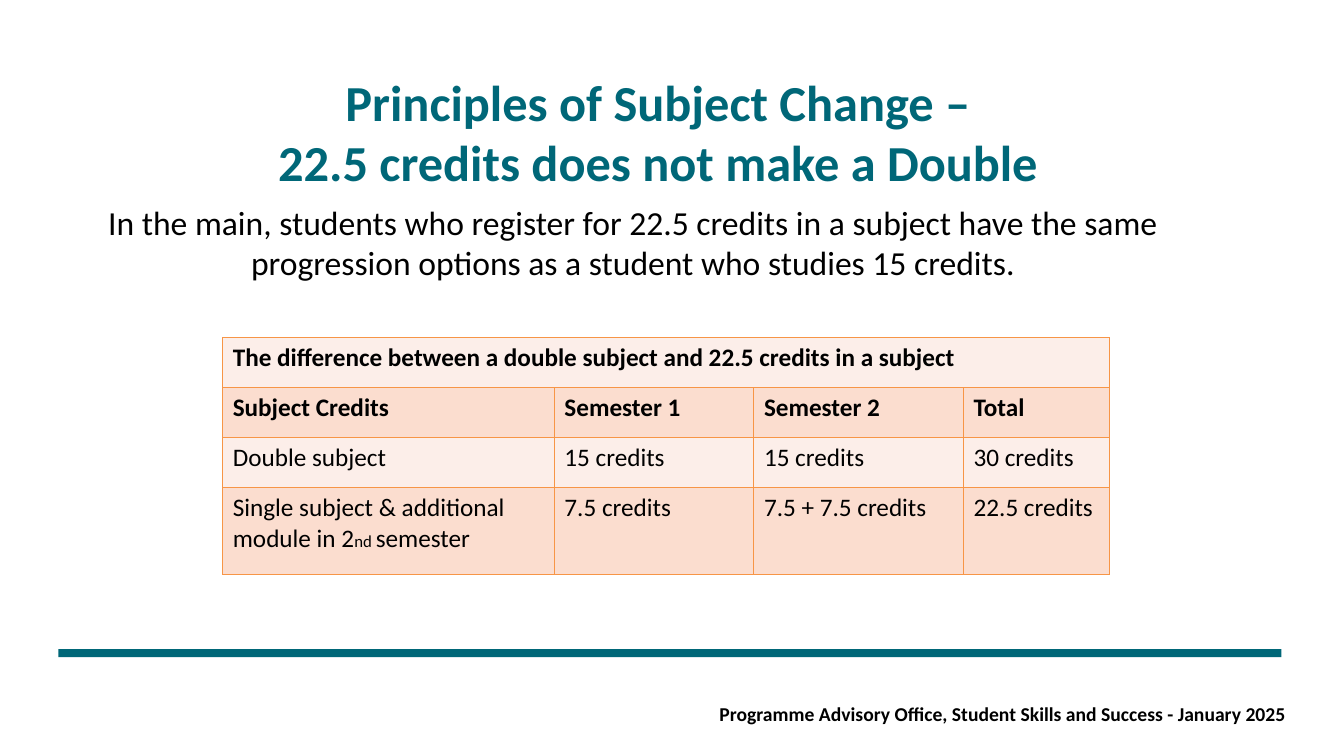
from lxml.etree import SubElement
from pptx import Presentation
from pptx.dml.color import RGBColor
from pptx.enum.shapes import MSO_SHAPE as Preset
from pptx.enum.text import MSO_ANCHOR as Anchor, MSO_AUTO_SIZE as AutoSize, PP_ALIGN as Align
from pptx.oxml.ns import qn
from pptx.util import Inches, Pt

WIDTH, HEIGHT = 13.33, 7.5
COLUMNS, ROWS = 40, 30
COLORS = {"teal": "006778", "black": "000000", "border": "F79546",
          "light": "FCEEE9", "dark": "FBDDCF"}

CREDIT_ROWS = [
    ["The difference between a double subject and 22.5 credits in a subject", "", "", ""],
    ["Subject Credits", "Semester 1", "Semester 2", "Total"],
    ["Double subject", "15 credits", "15 credits", "30 credits"],
    ["Single subject & additional", "7.5 credits", "7.5 + 7.5 credits", "22.5 credits"],
]


def color(name):
    return RGBColor.from_string(COLORS[name])


def across(columns):
    return Inches(columns * WIDTH / COLUMNS)


def down(rows):
    return Inches(rows * HEIGHT / ROWS)


class SlideBuilder:
    """Places elements on one slide, in grid columns and rows."""

    font_name = "Calibri"

    def __init__(self, slide):
        self.slide = slide

    def box(self, left, top, width, height):
        return across(left), down(top), across(width), down(height)

    def style(self, paragraph, size, bold=False, tint="black", align=Align.LEFT):
        paragraph.alignment = align
        paragraph.space_before = Pt(0)
        font = paragraph.font
        font.name, font.size, font.bold = self.font_name, Pt(size), bold
        font.color.rgb = color(tint)

    def fill_text(self, shape, grid_box, lines, anchor=Anchor.TOP, **style):
        shape.left, shape.top, shape.width, shape.height = self.box(*grid_box)
        frame = shape.text_frame
        frame.word_wrap = True
        frame.auto_size = AutoSize.NONE
        frame.vertical_anchor = anchor
        frame.text = "\n".join(lines)
        for paragraph in frame.paragraphs:
            self.style(paragraph, **style)

    def title(self, grid_box, lines):
        shape = self.slide.shapes.title
        self.fill_text(shape, grid_box, lines, anchor=Anchor.MIDDLE, size=36,
                       bold=True, tint="teal", align=Align.CENTER)
        frame = shape.text_frame
        frame.margin_top = frame.margin_bottom = 0

    def statement(self, grid_box, text):
        shape = self.slide.placeholders[1]
        shape.text_frame.text = text
        self.fill_text(shape, grid_box, [text], size=24, align=Align.CENTER)
        properties = shape.text_frame.paragraphs[0]._p.get_or_add_pPr()
        properties.set("marL", "0")
        properties.set("indent", "0")
        # The bullet element follows the spacing and precedes nothing else here
        SubElement(properties, qn("a:buNone"))
        default_run = properties.find(qn("a:defRPr"))
        if default_run is not None:
            properties.append(default_run)

    def footer(self, grid_box, text):
        shape = self.slide.shapes.add_textbox(*self.box(*grid_box))
        self.fill_text(shape, grid_box, [text], size=14, bold=True, align=Align.RIGHT)

    def rule(self, grid_box):
        bar = self.slide.shapes.add_shape(Preset.RECTANGLE, *self.box(*grid_box))
        bar.shadow.inherit = False
        bar.fill.solid()
        bar.fill.fore_color.rgb = color("teal")
        bar.line.fill.background()

    def border(self, cell):
        properties = cell._tc.get_or_add_tcPr()
        for side in ("lnL", "lnR", "lnT", "lnB"):
            line = SubElement(properties, qn(f"a:{side}"), w=str(Pt(0.75)))
            fill = SubElement(line, qn("a:solidFill"))
            SubElement(fill, qn("a:srgbClr"), val=COLORS["border"])

    def table(self, left, top, widths, heights, values, header_rows):
        grid_box = self.box(left, top, sum(widths), sum(heights))
        table = self.slide.shapes.add_table(len(heights), len(widths), *grid_box).table
        table.first_row = table.horz_banding = False
        for column, width in zip(table.columns, widths):
            column.width = across(width)
        for index, (row, height, texts) in enumerate(zip(table.rows, heights, values)):
            row.height = down(height)
            for cell, text in zip(row.cells, texts):
                cell.text = text
                self.style(cell.text_frame.paragraphs[0], 18, bold=index < header_rows)
                self.border(cell)
                cell.fill.solid()
                cell.fill.fore_color.rgb = color("dark" if index % 2 else "light")
        table.cell(0, 0).merge(table.cell(0, len(widths) - 1))
        return table

    def add_semester_line(self, cell):
        """Add the second line of the last row, with its small ordinal."""
        paragraph = cell.text_frame.add_paragraph()
        self.style(paragraph, 18)
        for text, size in (("module in 2", 18), ("nd ", 12), ("semester", 18)):
            run = paragraph.add_run()
            run.text = text
            run.font.size = Pt(size)


def main():
    presentation = Presentation()
    presentation.slide_width, presentation.slide_height = Inches(WIDTH), Inches(HEIGHT)
    slide = presentation.slides.add_slide(presentation.slide_layouts[1])
    builder = SlideBuilder(slide)
    builder.rule((1.74, 25.76, 36.4, 0.32))
    builder.title((7.14, 2.77, 24.9, 4.88),
                  ["Principles of Subject Change –", "22.5 credits does not make a Double"])
    builder.statement((2.31, 7.8, 33.06, 3.64),
                      "In the main, students who register for 22.5 credits in a subject have "
                      "the same progression options as a student who studies 15 credits.")
    table = builder.table(6.63, 13.4, [9.87, 5.94, 6.24, 4.35], [1.98, 1.98, 1.98, 3.46],
                          CREDIT_ROWS, header_rows=2)
    builder.add_semester_line(table.cell(3, 0))
    builder.footer((16.23, 27.64, 22.35, 1.48),
                   "Programme Advisory Office, Student Skills and Success - January 2025")
    presentation.save("out.pptx")


if __name__ == "__main__":
    main()
